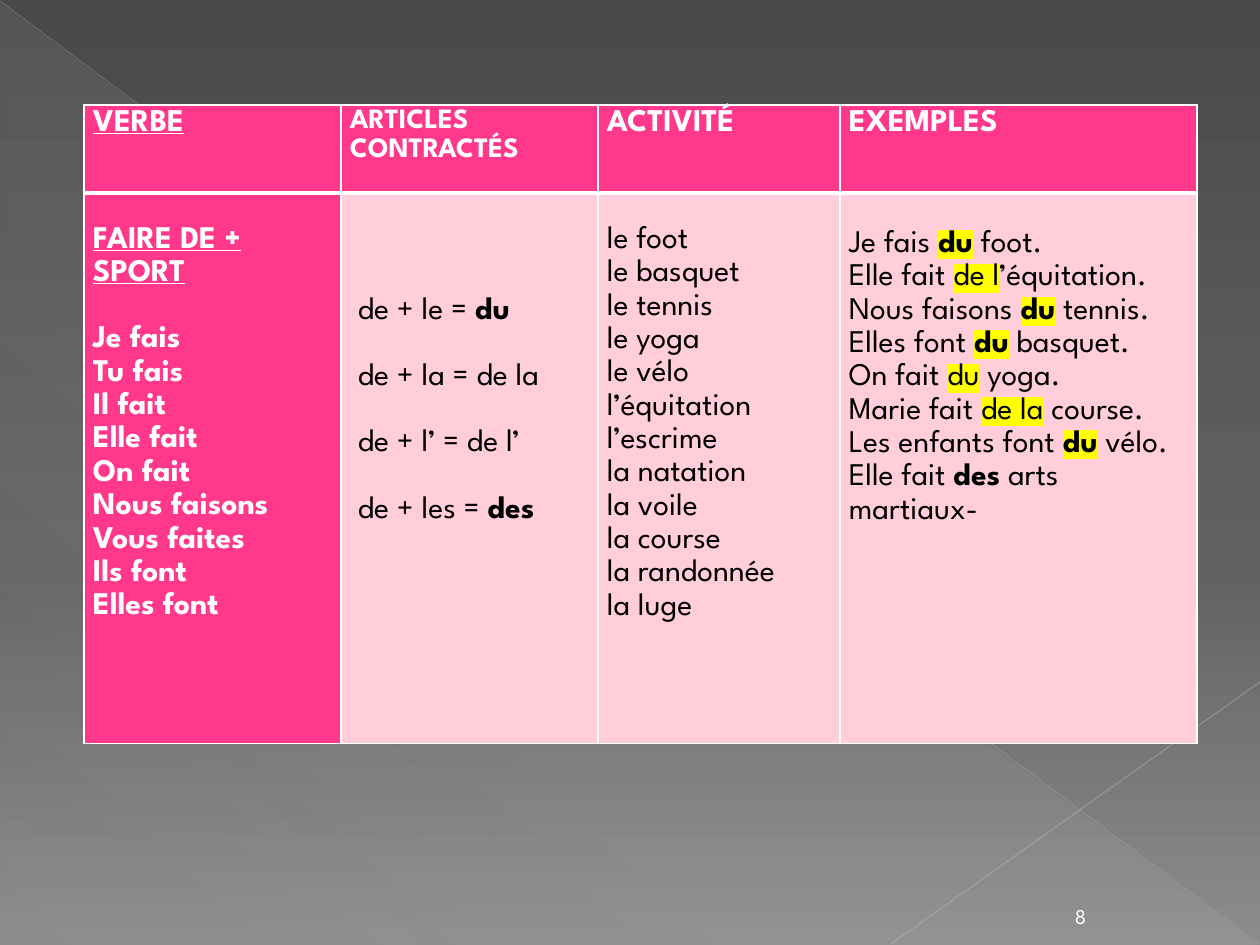
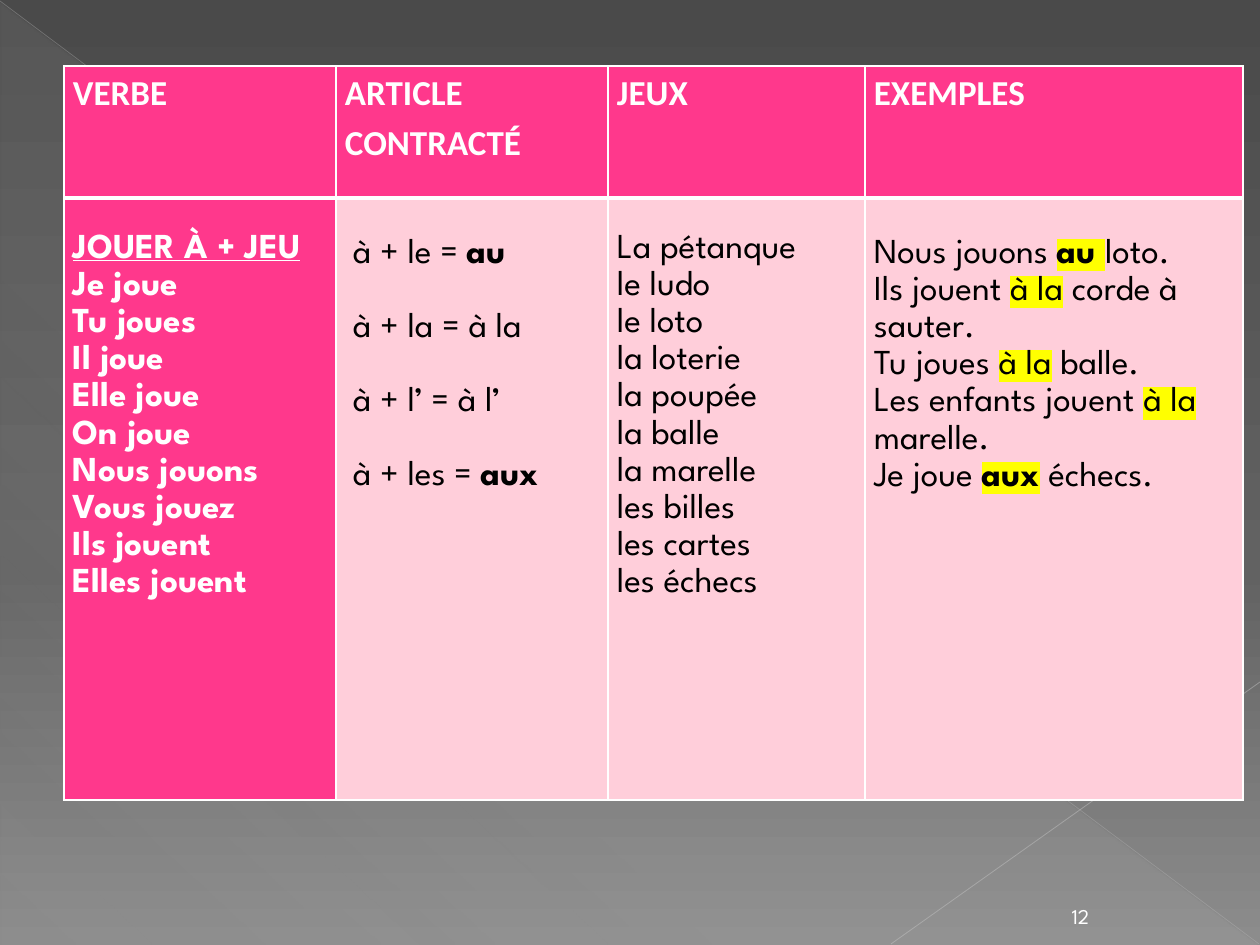
"""Builds two French grammar table slides: faire de + sport and jouer à + jeu."""
from lxml.etree import SubElement
from pptx import Presentation
from pptx.dml.color import RGBColor
from pptx.enum.shapes import MSO_CONNECTOR, MSO_SHAPE
from pptx.enum.text import MSO_ANCHOR, PP_ALIGN
from pptx.oxml.ns import qn
from pptx.util import Emu, Pt

SCALE = 914400 / 126
COLORS = {
    "white": "FFFFFF", "black": "000000", "pink": "FF388C", "pale": "FFCEDA",
    "marker": "FFFF00", "veil": "D2D2D2", "diagonal": "BFBFBF", "corner": "C6C6C6",
    "dark": "4A4A4A", "grey": "626262", "light": "8C8C8C",
}
FONT = "League Spartan"
LINE_SPACING = 1.15
PAD = 9


def px(n):
    """Turn pixels into EMU."""
    return Emu(round(n * SCALE))


def rgb(name):
    """Look up a named colour."""
    return RGBColor.from_string(COLORS[name])


def add_color(parent, name, opacity=100):
    """Append a colour element with an opacity in percent."""
    color = SubElement(parent, qn("a:srgbClr"), val=COLORS[name])
    if opacity < 100:
        SubElement(color, qn("a:alpha"), val=str(opacity * 1000))


def set_gradient(fill, element, stops, angle):
    """Give a fill a clockwise linear gradient of (position, colour, opacity) stops."""
    fill.gradient()
    fill.gradient_angle = 360 - angle
    stop_list = next(element.iter(qn("a:gsLst")))
    for old in list(stop_list):
        stop_list.remove(old)
    for position, name, opacity in stops:
        add_color(SubElement(stop_list, qn("a:gs"), pos=str(position * 1000)), name, opacity)


def add_line(slide, start, end, name, width, opacity):
    """Draw a thin translucent line."""
    s = slide.shapes.add_connector(MSO_CONNECTOR.STRAIGHT, *map(px, start + end))
    s.line.width = Pt(width)
    s.line.color.rgb = rgb(name)
    color = next(s._element.spPr.iter(qn("a:srgbClr")))
    SubElement(color, qn("a:alpha"), val=str(opacity * 1000))
    SubElement(s._element.spPr, qn("a:effectLst"))


def add_backdrop(slide):
    """Draw the grey gradient, the translucent triangle and the two diagonals."""
    set_gradient(slide.background.fill, slide.element,
                 [(0, "dark", 100), (60, "grey", 100), (100, "light", 100)], 90)
    s = slide.shapes.add_shape(MSO_SHAPE.RIGHT_TRIANGLE, *map(px, (1, 3, 1257, 942)))
    s.shadow.inherit = False
    s.line.fill.background()
    set_gradient(s.fill, s._element.spPr,
                 [(0, "veil", 10), (70, "veil", 8), (100, "veil", 1)], 133)
    add_line(slide, (0, 1), (1259, 944), "diagonal", 0.39, 35)
    add_line(slide, (1260, 682), (891, 944), "corner", 0.47, 45)


def add_page_number(slide, number):
    """Write the page number at the bottom right."""
    tf = slide.shapes.add_textbox(*map(px, (1046, 893, 69, 42))).text_frame
    tf.word_wrap = True
    tf.vertical_anchor = MSO_ANCHOR.BOTTOM
    tf.text = str(number)
    p = tf.paragraphs[0]
    p.alignment = PP_ALIGN.CENTER
    format_run(p.runs[0], 12, FONT, "white")


def format_run(r, size, font, color, bold=False):
    """Set the font of a run."""
    r.font.size = Pt(size)
    r.font.name = font
    r.font.bold = bold
    r.font.color.rgb = rgb(color)


def highlight(r):
    """Mark a run in yellow, in schema order before the typeface."""
    mark = r.font._element.makeelement(qn("a:highlight"), {})
    add_color(mark, "marker")
    r.font._element.find(qn("a:latin")).addprevious(mark)


def write_line(p, line, size, font, color, bold):
    """Write a line whose |parts| may start with * bold, ~ highlighted or _ underlined."""
    p.line_spacing = LINE_SPACING
    for i, part in enumerate(line.split("|")):
        if not part:
            continue
        text = part.lstrip("*~_") if i % 2 else part
        marks = part[:len(part) - len(text)]
        r = p.add_run()
        r.text = text
        format_run(r, size, font, color, bold or "*" in marks)
        r.font.underline = "_" in marks
        if "~" in marks:
            highlight(r)


def set_borders(cell, **widths):
    """Draw white borders, given a width in points for each side."""
    tcPr = cell._tc.get_or_add_tcPr()
    for i, (side, width) in enumerate(widths.items()):
        ln = tcPr.makeelement(qn("a:ln" + side), {"w": str(Pt(width))})
        add_color(SubElement(ln, qn("a:solidFill")), "white")
        tcPr.insert(i, ln)


def fill_cell(cell, lines, size, fill, color, bold, font=FONT, top=0, indent=0, gaps=(), gap=0):
    """Fill a cell with lines, leaving a gap before the lines numbered in gaps."""
    cell.fill.solid()
    cell.fill.fore_color.rgb = rgb(fill)
    cell.margin_left, cell.margin_right = px(PAD + indent), px(PAD)
    cell.margin_top, cell.margin_bottom = px(top), 0
    tf = cell.text_frame
    for i, line in enumerate(lines):
        p = tf.add_paragraph() if i else tf.paragraphs[0]
        if i in gaps:
            p.space_before = px(gap)
        write_line(p, line, size, font, color, bold)


def add_grammar_table(slide, left, top, widths, heights, size, gap, columns, header_font=FONT):
    """Add a table with a pink header row and a pink verb column."""
    frame = slide.shapes.add_table(2, len(columns), *map(px, (left, top, sum(widths), sum(heights))))
    table = frame.table
    for row, height in zip(table.rows, heights):
        row.height = px(height)
    for i, (width, column) in enumerate(zip(widths, columns)):
        table.columns[i].width = px(width)
        header, body = table.cell(0, i), table.cell(1, i)
        fill_cell(header, column["title"], column.get("title_size", size), "pink", "white", True,
                  header_font)
        set_borders(header, L=1, R=1, T=1, B=3)
        fill, color = ("pale", "black") if i else ("pink", "white")
        fill_cell(body, column["lines"], size, fill, color, i == 0, top=column["top"],
                  indent=column.get("indent", 0), gaps=column.get("gaps", ()), gap=gap)
        set_borders(body, L=1, R=1, B=1)


SPORT = [
    {"title": ["|_VERBE|"], "top": 29, "gaps": [1],
     "lines": ["|_FAIRE DE + SPORT|", "Je fais", "Tu fais", "Il fait", "Elle fait", "On fait",
               "Nous faisons", "Vous faites", "Ils font", "Elles font"]},
    {"title": ["ARTICLES", "CONTRACTÉS"], "title_size": 16, "top": 100, "indent": 8,
     "gaps": [1, 2, 3],
     "lines": ["de + le = |*du|", "de + la = de la", "de + l’ = de l’", "de + les = |*des|"]},
    {"title": ["ACTIVITÉ"], "top": 29,
     "lines": ["le foot", "le basquet", "le tennis", "le yoga", "le vélo", "l’équitation",
               "l’escrime", "la natation", "la voile", "la course", "la randonnée", "la luge"]},
    {"title": ["EXEMPLES"], "top": 33,
     "lines": ["Je fais |*~du| foot.", "Elle fait |~de l|’équitation.",
               "Nous faisons |*~du| tennis.", "Elles font |*~du| basquet.",
               "On fait |~du| yoga.", "Marie fait |~de la| course.",
               "Les enfants font |*~du| vélo.", "Elle fait |*des| arts martiaux-"]},
]
GAMES = [
    {"title": ["VERBE"], "top": 31,
     "lines": ["|_JOUER À + JEU|", "Je joue", "Tu joues", "Il joue", "Elle joue", "On joue",
               "Nous jouons", "Vous jouez", "Ils jouent", "Elles jouent"]},
    {"title": ["ARTICLE CONTRACTÉ"], "top": 36, "indent": 8, "gaps": [1, 2, 3],
     "lines": ["à + le = |*au|", "à + la = à la", "à + l’ = à l’", "à + les = |*aux|"]},
    {"title": ["JEUX"], "top": 31,
     "lines": ["La pétanque", "le ludo", "le loto", "la loterie", "la poupée", "la balle",
               "la marelle", "les billes", "les cartes", "les échecs"]},
    {"title": ["EXEMPLES"], "top": 36,
     "lines": ["Nous jouons |*~au |loto.", "Ils jouent |~à la| corde à sauter.",
               "Tu joues |~à la| balle.", "Les enfants jouent |~à la| marelle.",
               "Je joue |*~aux| échecs."]},
]


def add_slide(prs, number):
    """Add a blank slide with the shared backdrop and page number."""
    slide = prs.slides.add_slide(prs.slide_layouts[6])
    add_backdrop(slide)
    add_page_number(slide, number)
    return slide


def main():
    """Build both slides and save them."""
    prs = Presentation()
    prs.slide_width, prs.slide_height = px(1260), px(945)
    add_grammar_table(add_slide(prs, 8), 84, 105, (257, 257, 242, 357), (88, 547), 18, 33, SPORT)
    add_grammar_table(add_slide(prs, 12), 64, 66, (272, 272, 257, 378), (132, 602), 20, 37, GAMES,
                      header_font="Calibri")
    prs.save("out.pptx")


if __name__ == "__main__":
    main()
